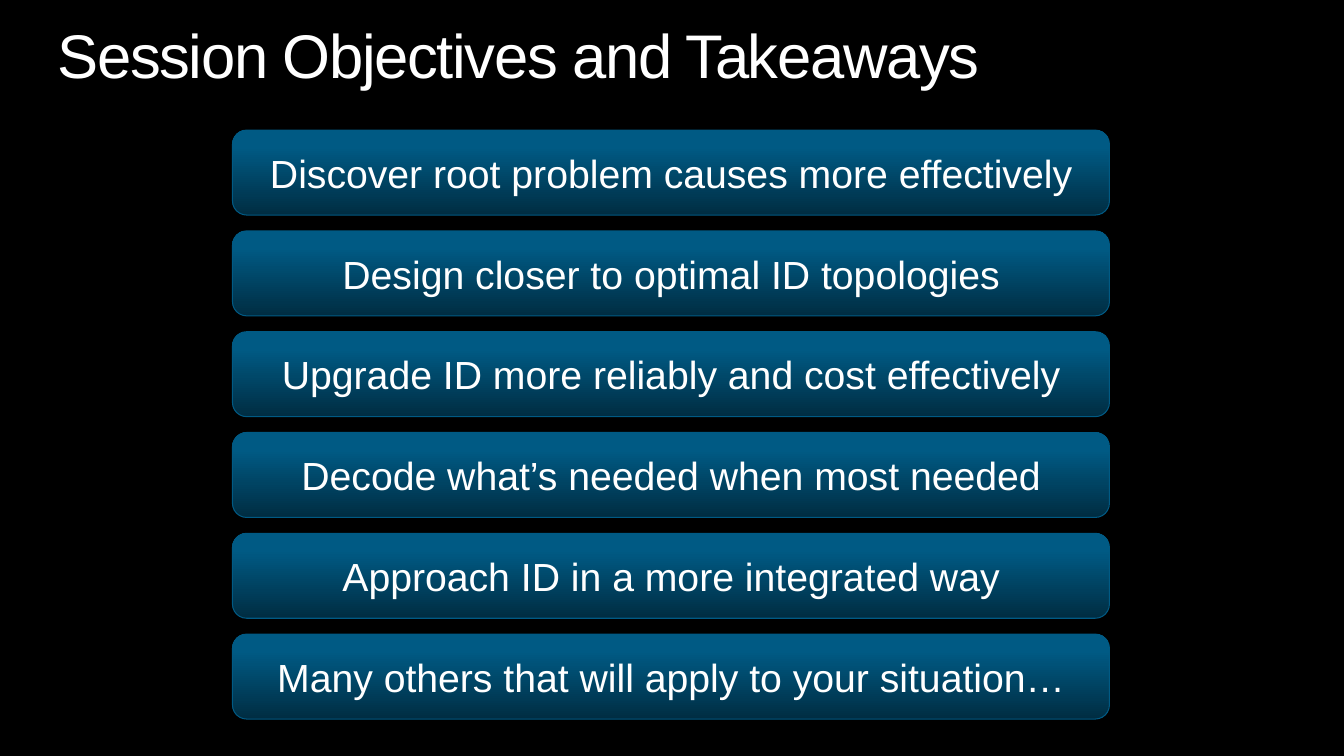
from dataclasses import dataclass

from pptx import Presentation
from pptx.dml.color import RGBColor
from pptx.enum import shapes, text
from pptx.util import Cm, Pt

# Content
HEADING = "Session Objectives and Takeaways"
OBJECTIVES = [
    "Discover root problem causes more effectively",
    "Design closer to optimal ID topologies",
    "Upgrade ID more reliably and cost effectively",
    "Decode what’s needed when most needed",
    "Approach ID in a more integrated way",
    "Many others that will apply to your situation…",
]


@dataclass(frozen=True)
class Theme:
    font: str = "Arial"
    background: RGBColor = RGBColor.from_string("000000")
    ink: RGBColor = RGBColor.from_string("FFFFFF")
    bar_dark: RGBColor = RGBColor.from_string("002D42")
    bar_light: RGBColor = RGBColor.from_string("005A84")
    heading_size: Pt = Pt(44)
    objective_size: Pt = Pt(28)
    outline: Pt = Pt(0.75)


THEME = Theme()

# Layout
SLIDE_WIDTH, SLIDE_HEIGHT = Cm(33.87), Cm(19.05)
HEADING_BOX = Cm(1.45), Cm(0.64), Cm(30.96), Cm(1.7)
BAR_LEFT, BAR_WIDTH, BAR_HEIGHT = Cm(5.86), Cm(22.1), Cm(2.14)
FIRST_BAR_TOP, BAR_PITCH = Cm(3.28), Cm(2.54)


def add_run(paragraph, words, size):
    run = paragraph.add_run()
    run.text = words
    run.font.name = THEME.font
    run.font.size = size
    run.font.color.rgb = THEME.ink
    return run


def add_heading(slide):
    heading = slide.shapes.add_textbox(*HEADING_BOX).text_frame
    heading.word_wrap = True
    heading.margin_left = heading.margin_right = 0
    heading.margin_top = heading.margin_bottom = 0
    line = heading.paragraphs[0]
    line.line_spacing = 0.9
    run = add_run(line, HEADING, THEME.heading_size)
    run.font._element.set("spc", "-100")  # tightened letters


def add_objective(slide, row, words):
    bar = slide.shapes.add_shape(
        shapes.MSO_SHAPE.ROUNDED_RECTANGLE,
        BAR_LEFT, FIRST_BAR_TOP + row * BAR_PITCH, BAR_WIDTH, BAR_HEIGHT)
    bar.shadow.inherit = False
    bar.line.color.rgb = THEME.bar_light
    bar.line.width = THEME.outline

    # Dark at the bottom, flat light colour over the top fifth
    bar.fill.gradient()
    bar.fill.gradient_angle = 90
    dark, light = bar.fill.gradient_stops
    dark.color.rgb, dark.position = THEME.bar_dark, 0
    light.color.rgb, light.position = THEME.bar_light, 0.8

    frame = bar.text_frame
    frame.word_wrap = True
    frame.vertical_anchor = text.MSO_ANCHOR.MIDDLE
    frame.paragraphs[0].alignment = text.PP_ALIGN.CENTER
    add_run(frame.paragraphs[0], words, THEME.objective_size)


def main():
    deck = Presentation()
    deck.slide_width, deck.slide_height = SLIDE_WIDTH, SLIDE_HEIGHT
    slide = deck.slides.add_slide(deck.slide_layouts[6])
    slide.background.fill.solid()
    slide.background.fill.fore_color.rgb = THEME.background

    add_heading(slide)
    for row, words in enumerate(OBJECTIVES):
        add_objective(slide, row, words)
    deck.save("out.pptx")


if __name__ == "__main__":
    main()
